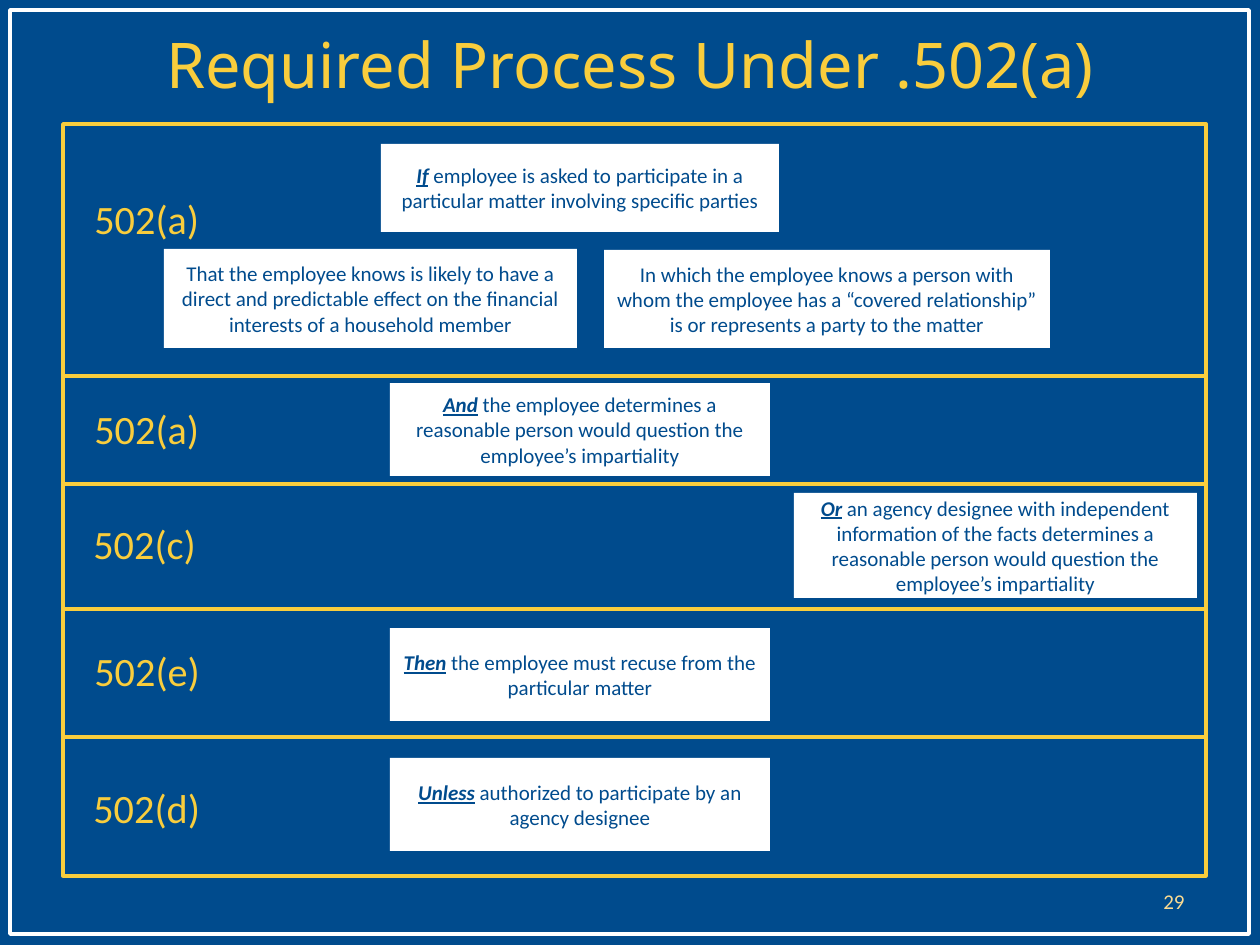
from dataclasses import dataclass

from pptx import Presentation
from pptx.dml.color import RGBColor
from pptx.enum.shapes import MSO_SHAPE
from pptx.enum.text import MSO_ANCHOR, MSO_AUTO_SIZE, PP_ALIGN
from pptx.util import Emu, Pt

PX_PER_INCH = 126
NAVY, GOLD, PALE_GOLD, WHITE = "004B8D", "F9CD3D", "FBDB92", "FFFFFF"
BODY_FONT, TITLE_FONT = "Calibri", "Noto Sans"
BAND_LEFT, BAND_WIDTH, FIRST_BAND_TOP = 63, 1143, 124
LABEL_WIDTH, LABEL_HEIGHT = 136, 62


@dataclass
class Card:
    left: int
    top: int
    width: int
    height: int
    lines: list[str]
    lead: str = ""


@dataclass
class Band:
    height: int
    label: str
    label_left: int
    label_top: int
    cards: list[Card]


BANDS = [
    Band(252, "502(a)", 82, 188, [
        Card(381, 144, 398, 88, ["employee is asked to participate in a",
                                 "particular matter involving specific parties"], "If"),
        Card(164, 249, 413, 99, ["That the employee knows is likely to have a direct and predictable "
                                 "effect on the financial interests of a household member"]),
        Card(604, 250, 446, 98, ["In which the employee knows a person with whom the employee has a "
                                 "“covered relationship” is or represents a party to the matter"]),
    ]),
    Band(108, "502(a)", 82, 398, [
        Card(390, 383, 380, 93, ["the employee determines a reasonable person would question "
                                 "the employee’s impartiality"], "And"),
    ]),
    Band(125, "502(c)", 81, 513, [
        Card(794, 493, 403, 105, ["an agency designee with independent information of the facts determines "
                                  "a reasonable person would question the employee’s impartiality"], "Or"),
    ]),
    Band(128, "502(e)", 82, 640, [
        Card(390, 628, 380, 93, ["the employee must recuse from the particular matter"], "Then"),
    ]),
    Band(139, "502(d)", 81, 777, [
        Card(390, 758, 380, 93, ["authorized to participate by an agency designee"], "Unless"),
    ]),
]


def px(length: int) -> Emu:
    return Emu(round(length * 914400 / PX_PER_INCH))


def color(value: str) -> RGBColor:
    return RGBColor.from_string(value)


def style(paragraph, size: int, tint: str, align=PP_ALIGN.LEFT, font: str = BODY_FONT) -> None:
    paragraph.alignment = align
    paragraph.font.name = font
    paragraph.font.size = Pt(size)
    paragraph.font.color.rgb = color(tint)


def add_rectangle(page, left: int, top: int, width: int, height: int,
                  fill: str | None = None, line: str | None = None):
    box = page.shapes.add_shape(MSO_SHAPE.RECTANGLE, px(left), px(top), px(width), px(height))
    box.shadow.inherit = False
    if fill:
        box.fill.solid()
        box.fill.fore_color.rgb = color(fill)
    else:
        box.fill.background()
    if line:
        box.line.color.rgb = color(line)
        box.line.width = Pt(2)
    else:
        box.line.fill.background()
    return box


def add_label(page, text: str, left: int, top: int) -> None:
    frame = page.shapes.add_textbox(px(left), px(top), px(LABEL_WIDTH), px(LABEL_HEIGHT)).text_frame
    frame.word_wrap = False
    frame.auto_size = MSO_AUTO_SIZE.NONE
    frame.text = text
    style(frame.paragraphs[0], 23, GOLD)


def add_card(page, card: Card) -> None:
    frame = add_rectangle(page, card.left, card.top, card.width, card.height, fill=WHITE).text_frame
    frame.word_wrap = True
    frame.vertical_anchor = MSO_ANCHOR.MIDDLE
    for index, line in enumerate(card.lines):
        paragraph = frame.add_paragraph() if index else frame.paragraphs[0]
        style(paragraph, 12, NAVY, PP_ALIGN.CENTER)
        if card.lead and index == 0:
            span = paragraph.add_run()
            span.text = card.lead
            span.font.bold = span.font.italic = span.font.underline = True
            line = " " + line
        paragraph.add_run().text = line


def add_title(page, text: str) -> None:
    title = page.shapes.title
    title.left, title.top, title.width, title.height = px(63), px(-16), px(1134), px(158)
    title.text_frame.text = text
    title.text_frame.vertical_anchor = MSO_ANCHOR.MIDDLE
    style(title.text_frame.paragraphs[0], 36, GOLD, PP_ALIGN.CENTER, TITLE_FONT)


def add_page_number(page, number: str) -> None:
    frame = page.shapes.add_textbox(px(903), px(876), px(294), px(50)).text_frame
    frame.word_wrap = True
    frame.vertical_anchor = MSO_ANCHOR.MIDDLE
    frame.text = number
    style(frame.paragraphs[0], 12, PALE_GOLD, PP_ALIGN.RIGHT)


def main() -> None:
    deck = Presentation()
    deck.slide_width, deck.slide_height = px(1260), px(945)
    page = deck.slides.add_slide(deck.slide_layouts[5])

    # Background, border, title and page number
    page.background.fill.solid()
    page.background.fill.fore_color.rgb = color(NAVY)
    add_rectangle(page, 10, 10, 1239, 924, line=WHITE)
    add_title(page, "Required Process Under .502(a)")
    add_page_number(page, "29")

    # Stacked bands, each with its label and cards
    top = FIRST_BAND_TOP
    for band in BANDS:
        add_rectangle(page, BAND_LEFT, top, BAND_WIDTH, band.height, line=GOLD)
        add_label(page, band.label, band.label_left, band.label_top)
        for card in band.cards:
            add_card(page, card)
        top += band.height

    deck.save("out.pptx")


if __name__ == "__main__":
    main()
